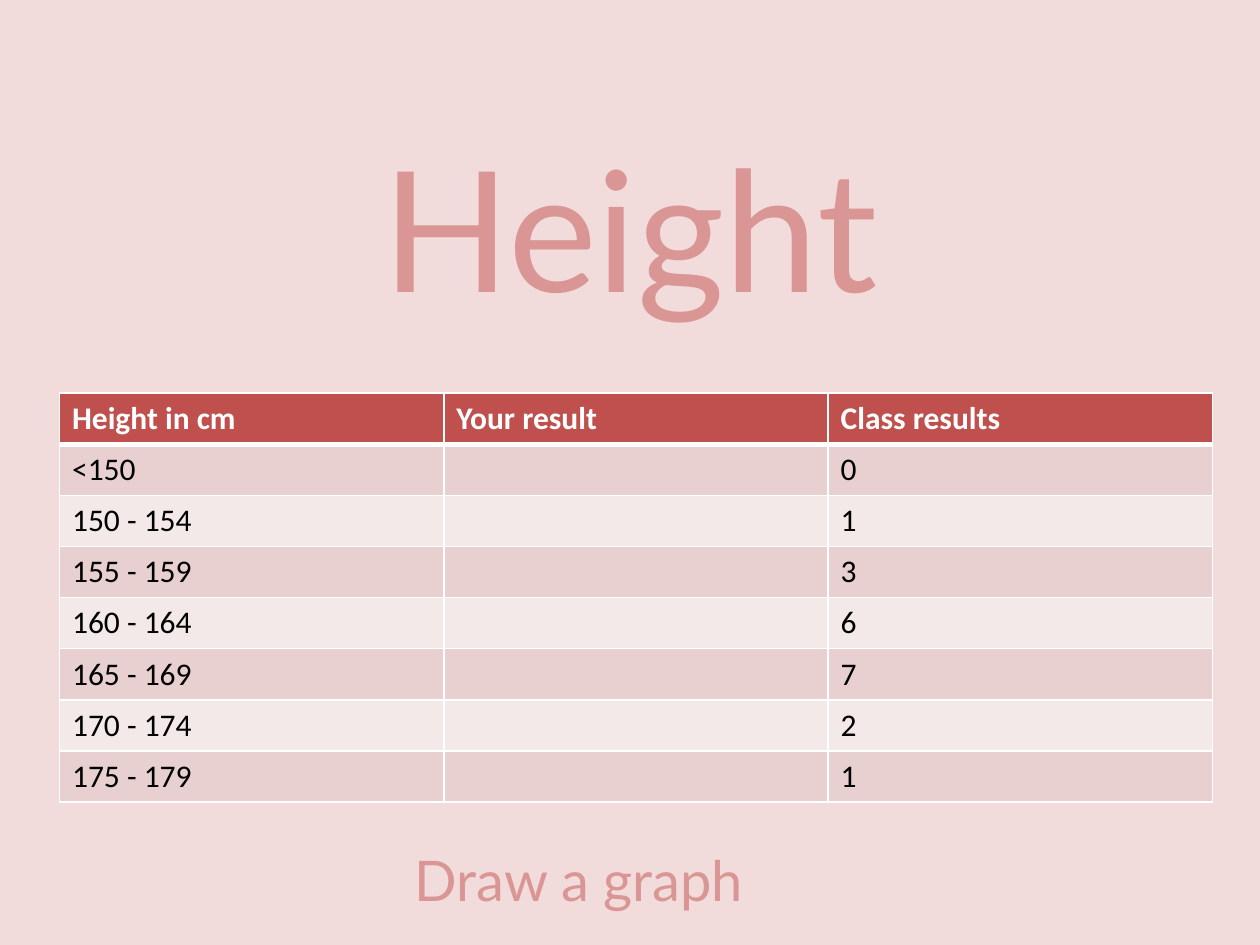
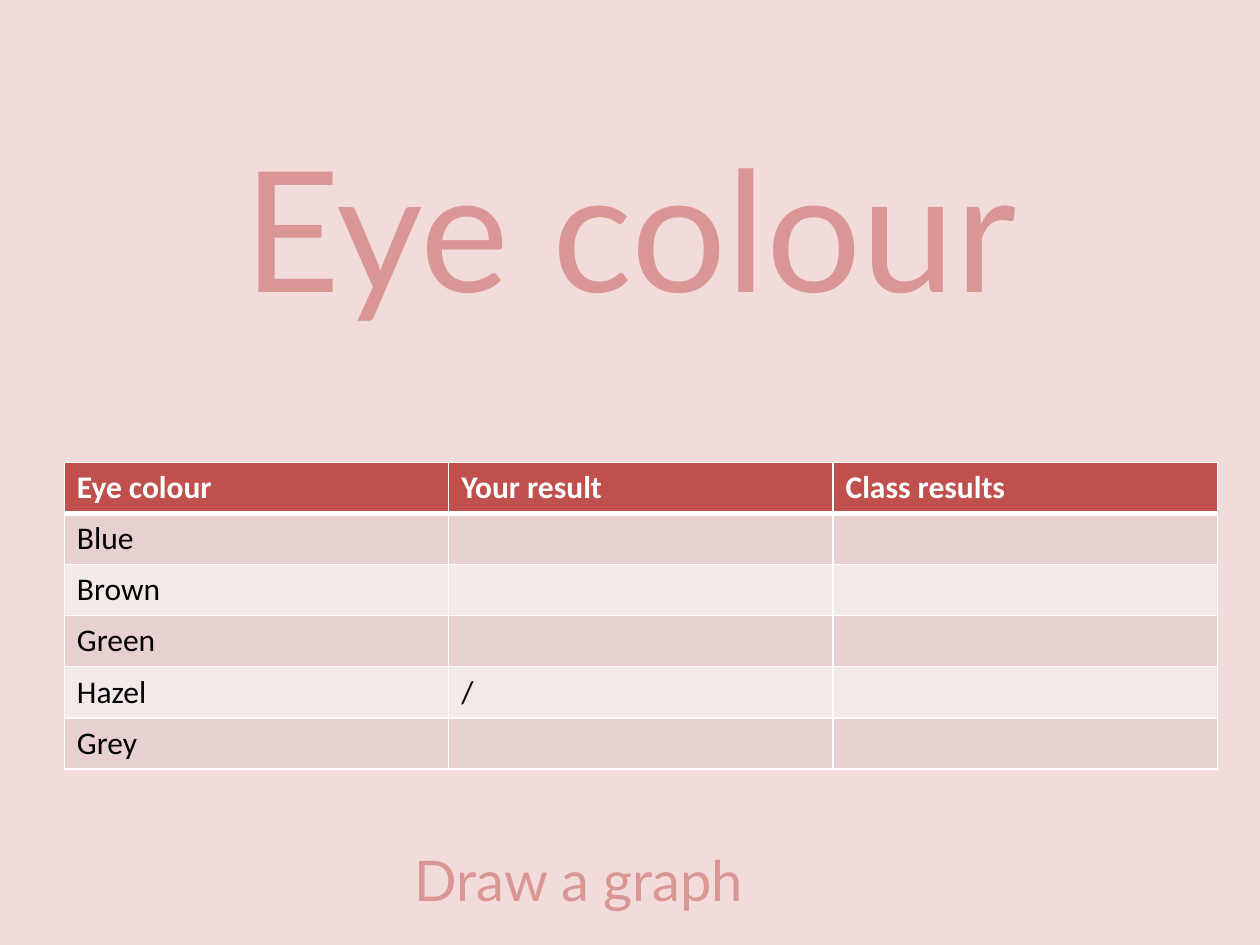
from dataclasses import dataclass

from lxml.etree import SubElement
from pptx import Presentation
from pptx.dml.color import RGBColor
from pptx.enum.text import MSO_ANCHOR, PP_ALIGN
from pptx.oxml.ns import qn
from pptx.util import Pt


@dataclass(frozen=True)
class Theme:
    background: str = "F2DCDB"
    accent: str = "D99694"
    header: str = "C0504D"
    bands: tuple = ("E8D0D0", "F4E9E9")
    light: str = "FFFFFF"
    dark: str = "000000"
    display_font: str = "Lato"
    table_font: str = "Calibri"
    title_size: int = 96
    task_size: int = 32
    table_size: int = 18
    rule: int = 1
    header_rule: int = 3
    column_width: float = 219.6
    row_height: float = 29.2


class Deck:
    def __init__(self, theme):
        self.theme = theme
        self.presentation = Presentation()
        self.presentation.slide_width = Pt(720)
        self.presentation.slide_height = Pt(540)
        self.slide = None

    def new_slide(self):
        blank = self.presentation.slide_layouts[6]
        self.slide = self.presentation.slides.add_slide(blank)
        fill = self.slide.background.fill
        fill.solid()
        fill.fore_color.rgb = RGBColor.from_string(self.theme.background)

    def run(self, paragraph, text, font, size, color, bold=False):
        run = paragraph.add_run()
        run.text = text
        run.font.name = font
        run.font.size = Pt(size)
        run.font.bold = bold
        run.font.color.rgb = RGBColor.from_string(color)

    def display_text(self, text, box, size, align, anchor):
        frame = self.slide.shapes.add_textbox(*map(Pt, box)).text_frame
        frame.word_wrap = True
        frame.vertical_anchor = anchor
        paragraph = frame.paragraphs[0]
        paragraph.alignment = align
        self.run(paragraph, text, self.theme.display_font, size, self.theme.accent)

    def title(self, text):
        self.display_text(text, (36, 21.6, 648, 214.56), self.theme.title_size,
                          PP_ALIGN.CENTER, MSO_ANCHOR.MIDDLE)

    def task(self, text):
        self.display_text(text, (229.7, 479.5, 267.1, 46.1), self.theme.task_size,
                          PP_ALIGN.LEFT, MSO_ANCHOR.TOP)

    def borders(self, cell, widths):
        properties = cell._tc.get_or_add_tcPr()
        for position, (side, width) in enumerate(widths.items()):
            line = SubElement(properties, qn(f"a:ln{side}"), w=str(Pt(width)))
            fill = SubElement(line, qn("a:solidFill"))
            SubElement(fill, qn("a:srgbClr"), val=self.theme.light)
            properties.insert(position, line)

    def cell(self, cell, text, row):
        theme = self.theme
        is_header = row == 0
        cell.fill.solid()
        cell.fill.fore_color.rgb = RGBColor.from_string(
            theme.header if is_header else theme.bands[(row - 1) % 2])
        self.borders(cell, {
            "L": theme.rule,
            "R": theme.rule,
            "T": theme.header_rule if row == 1 else theme.rule,
            "B": theme.header_rule if is_header else theme.rule,
        })
        paragraph = cell.text_frame.paragraphs[0]
        paragraph.font.size = Pt(theme.table_size)
        if text:
            self.run(paragraph, text, theme.table_font, theme.table_size,
                     theme.light if is_header else theme.dark, is_header)

    def table(self, left, top, rows):
        theme = self.theme
        columns = len(rows[0])
        table = self.slide.shapes.add_table(
            len(rows), columns, Pt(left), Pt(top),
            Pt(columns * theme.column_width), Pt(len(rows) * theme.row_height)).table
        for column in table.columns:
            column.width = Pt(theme.column_width)
        for index, texts in enumerate(rows):
            table.rows[index].height = Pt(theme.row_height)
            for column, text in enumerate(texts):
                self.cell(table.cell(index, column), text, index)

    def survey(self, title, measure, results, left, top):
        self.new_slide()
        self.title(title)
        self.table(left, top, [(measure, "Your result", "Class results"), *results])
        self.task("Draw a graph")


def main():
    deck = Deck(Theme())
    height_results = [
        ("<150", "", "0"),
        ("150 - 154", "", "1"),
        ("155 - 159", "", "3"),
        ("160 - 164", "", "6"),
        ("165 - 169", "", "7"),
        ("170 - 174", "", "2"),
        ("175 - 179", "", "1"),
    ]
    eye_results = [
        ("Blue", "", ""),
        ("Brown", "", ""),
        ("Green", "", ""),
        ("Hazel", "/", ""),
        ("Grey", "", ""),
    ]
    deck.survey("Height", "Height in cm", height_results, 34, 224.7)
    deck.survey("Eye colour", "Eye colour", eye_results, 36.8, 264.2)
    deck.presentation.save("out.pptx")


if __name__ == "__main__":
    main()
